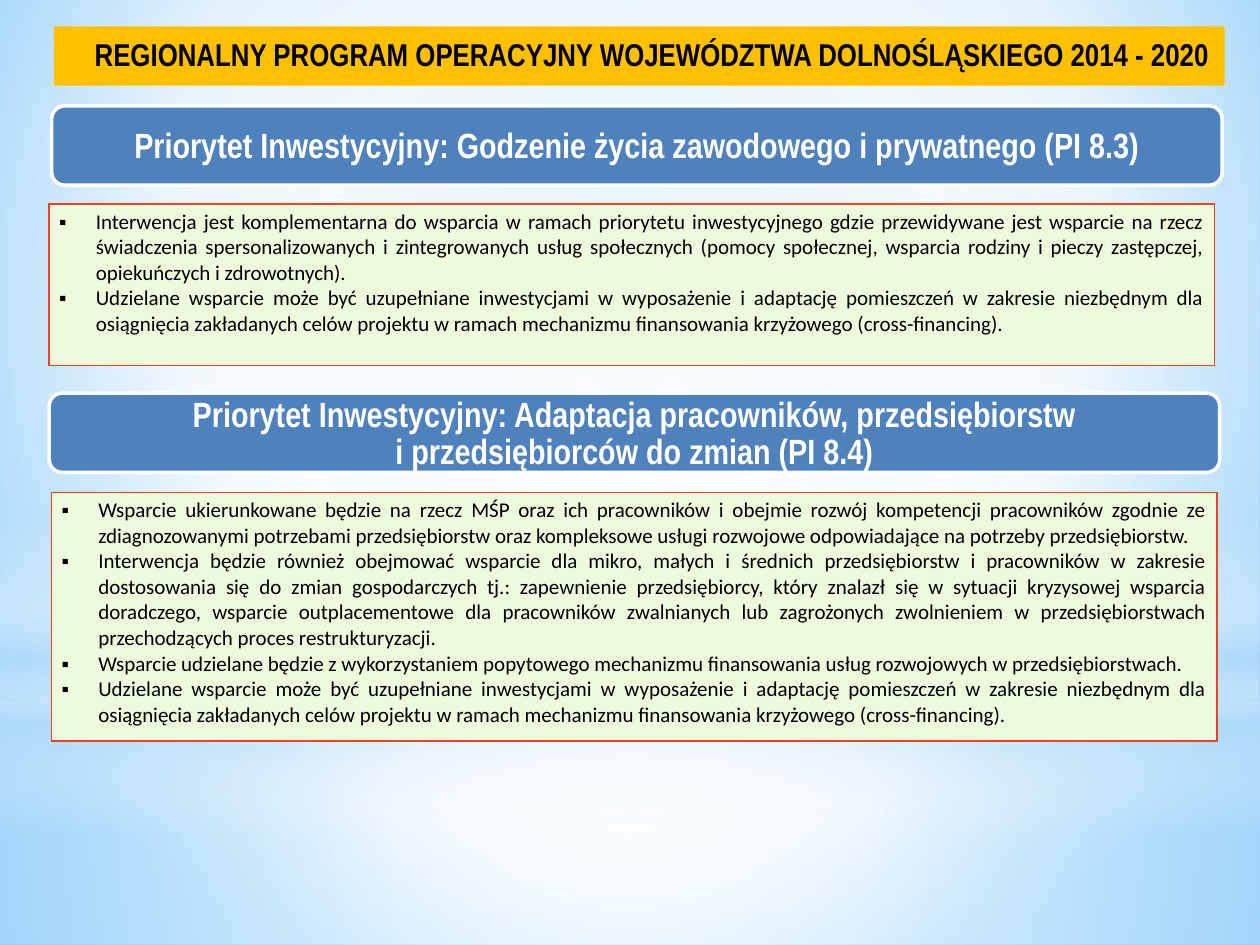
from pptx import Presentation
from pptx.dml.color import RGBColor
from pptx.enum.shapes import MSO_SHAPE
from pptx.enum.text import MSO_ANCHOR, MSO_AUTO_SIZE, PP_ALIGN
from pptx.oxml import parse_xml
from pptx.oxml.ns import nsdecls, qn
from pptx.util import Inches, Pt

HUES = {
    "gold": "FFC000", "blue": "4F81BD", "white": "FFFFFF", "black": "000000",
    "mint": "EDFBDC", "red": "F14124", "haze": "B4DCFA", "sky": "9ED5FF", "deep": "5BB9FF",
}
HEAD = "REGIONALNY PROGRAM OPERACYJNY WOJEWÓDZTWA DOLNOŚLĄSKIEGO 2014 - 2020"
CROSS = (
    "Udzielane wsparcie może być uzupełniane inwestycjami w wyposażenie i adaptację "
    "pomieszczeń w zakresie niezbędnym dla osiągnięcia zakładanych celów projektu w ramach "
    "mechanizmu finansowania krzyżowego (cross-financing)."
)
WORK = [
    "Interwencja jest komplementarna do wsparcia w ramach priorytetu inwestycyjnego gdzie "
    "przewidywane jest wsparcie na rzecz świadczenia spersonalizowanych i zintegrowanych usług "
    "społecznych (pomocy społecznej, wsparcia rodziny i pieczy zastępczej, opiekuńczych i "
    "zdrowotnych).",
    CROSS,
]
FIRMS = [
    "Wsparcie ukierunkowane będzie na rzecz MŚP oraz ich pracowników i obejmie rozwój "
    "kompetencji pracowników zgodnie ze zdiagnozowanymi potrzebami przedsiębiorstw oraz "
    "kompleksowe usługi rozwojowe odpowiadające na potrzeby przedsiębiorstw.",
    "Interwencja będzie również obejmować wsparcie dla mikro, małych i średnich przedsiębiorstw "
    "i pracowników w zakresie dostosowania się do zmian gospodarczych tj.: zapewnienie "
    "przedsiębiorcy, który znalazł się w sytuacji kryzysowej wsparcia doradczego, wsparcie "
    "outplacementowe dla pracowników zwalnianych lub zagrożonych zwolnieniem w "
    "przedsiębiorstwach przechodzących proces restrukturyzacji.",
    "Wsparcie udzielane będzie z wykorzystaniem popytowego mechanizmu finansowania usług "
    "rozwojowych w przedsiębiorstwach.",
    CROSS,
]


def color(name):
    """Return the named colour."""
    return RGBColor.from_string(HUES[name])


def shade(host, stops, focus=None):
    """Swap the solid fill of host for a radial or downward gradient."""
    marks = "".join(
        f'<a:gs pos="{pos * 1000}"><a:srgbClr val="{HUES[hue]}">'
        f'<a:alpha val="{alpha * 1000}"/></a:srgbClr></a:gs>'
        for pos, hue, alpha in stops
    )
    way = '<a:lin ang="5400000" scaled="0"/>'
    if focus:
        sides = " ".join(f'{side}="{part * 1000}"' for side, part in zip("ltrb", focus))
        way = f'<a:path path="circle"><a:fillToRect {sides}/></a:path>'
    fill = parse_xml(
        f'<a:gradFill {nsdecls("a")} rotWithShape="1"><a:gsLst>{marks}</a:gsLst>{way}</a:gradFill>'
    )
    host.replace(host.find(qn("a:solidFill")), fill)


def write(frame, lines, font="Arial Narrow", size=18, hue="black", bold=True,
          align=PP_ALIGN.CENTER, space=None, left=0, hang=0, mark=None):
    """Fill a text frame with formatted paragraphs."""
    frame.word_wrap = True
    for i, line in enumerate(lines):
        para = frame.add_paragraph() if i else frame.paragraphs[0]
        para.text = line
        props = para._p.get_or_add_pPr()
        props.set("marL", str(Inches(left)))
        props.set("indent", str(Inches(hang)))
        if mark:
            props.append(parse_xml(f'<a:buFont {nsdecls("a")} typeface="Arial"/>'))
            props.append(parse_xml(f'<a:buChar {nsdecls("a")} char="{mark}"/>'))
        para.alignment = align
        if space:
            para.line_spacing = space
        for run in para.runs:
            run.font.name, run.font.size, run.font.bold = font, Pt(size), bold
            run.font.color.rgb = color(hue)


class Deck:
    """Hold the grid, the style and the current slide."""

    def __init__(self, wide=10, high=7.5, cols=100, rows=75):
        """Open a title-only slide with a grid of cols by rows."""
        self.show = Presentation()
        self.show.slide_width, self.show.slide_height = Inches(wide), Inches(high)
        self.col, self.row = Inches(wide) / cols, Inches(high) / rows
        self.slide = self.show.slides.add_slide(self.show.slide_layouts[5])

    def place(self, x, y, w, h):
        """Turn grid units into lengths."""
        return [round(n * unit) for n, unit in zip((x, y, w, h), (self.col, self.row) * 2)]

    def ground(self, stops, focus):
        """Paint the slide background."""
        self.slide.background.fill.solid()
        shade(self.slide.element.find(".//" + qn("p:bgPr")), stops, focus)

    def shape(self, kind, box, hue="white", edge=None, host=None):
        """Add a flat preset shape."""
        item = (host or self.slide).shapes.add_shape(kind, *self.place(*box))
        item.shadow.inherit = False
        item.fill.solid()
        item.fill.fore_color.rgb = color(hue)
        if edge:
            item.line.color.rgb, item.line.width = color(edge), Pt(2)
        else:
            item.line.fill.background()
        return item

    def glow(self, kind, box, stops, focus=None):
        """Add a borderless shape with a soft gradient."""
        shade(self.shape(kind, box).element.spPr, stops, focus)

    def title(self, text, box):
        """Place the title bar above the backdrop."""
        bar = self.slide.shapes.title
        bar.left, bar.top, bar.width, bar.height = self.place(*box)
        bar.fill.solid()
        bar.fill.fore_color.rgb = color("gold")
        frame = bar.text_frame
        frame.auto_size, frame.vertical_anchor = MSO_AUTO_SIZE.NONE, MSO_ANCHOR.TOP
        frame.margin_top = Inches(0.07)
        write(frame, [text], left=0.2)
        self.slide.shapes.element.append(bar.element)

    def banner(self, text, x, y):
        """Add a rounded banner grouped with its label."""
        group = self.slide.shapes.add_group_shape()
        self.shape(MSO_SHAPE.ROUNDED_RECTANGLE, (x, y, 92.9, 6.3), "blue", "white", group)
        label = group.shapes.add_textbox(*self.place(x + 0.2, y + 0.3, 92.5, 6))
        frame = label.text_frame
        frame.vertical_anchor = MSO_ANCHOR.MIDDLE
        frame.margin_left = frame.margin_right = Inches(0.26)
        frame.margin_top = frame.margin_bottom = 0
        write(frame, [text], size=20, hue="white", space=0.9)

    def panel(self, lines, box):
        """Add a one-cell table with bulleted text."""
        table = self.slide.shapes.add_table(1, 1, *self.place(*box)).table
        table.first_row = table.horz_banding = False
        cell = table.cell(0, 0)
        cell.margin_left = cell.margin_right = Inches(0.08)
        cell.margin_top = cell.margin_bottom = Inches(0.04)
        cell.fill.solid()
        cell.fill.fore_color.rgb = color("mint")
        props = cell._tc.get_or_add_tcPr()
        for i, side in enumerate("LRTB"):
            props.insert(i, parse_xml(
                f'<a:ln{side} {nsdecls("a")} w="{Pt(1)}"><a:solidFill>'
                f'<a:srgbClr val="{HUES["red"]}"/></a:solidFill></a:ln{side}>'
            ))
        write(cell.text_frame, lines, font="Calibri", size=12, bold=False,
              align=PP_ALIGN.JUSTIFY, left=0.29, hang=-0.29, mark="▪")


def main():
    """Build and save the slide."""
    deck = Deck()
    mid = (50, 50, 50, 50)
    rect = MSO_SHAPE.RECTANGLE
    deck.ground([(0, "sky", 100), (60, "white", 100), (100, "deep", 100)], (20, 10, 20, 60))
    deck.glow(rect, (0, 55.8, 100, 19.2),
              [(0, "white", 91), (37, "white", 76), (100, "haze", 79)], mid)
    deck.glow(rect, (0, 0, 100, 55.8),
              [(0, "white", 89), (48, "white", 62), (100, "haze", 79)], mid)
    deck.glow(rect, (0, 41.2, 100, 25),
              [(0, "white", 0), (29, "white", 30), (45, "haze", 40),
               (55, "white", 26), (65, "haze", 60), (100, "white", 0)])
    deck.glow(MSO_SHAPE.OVAL, (0, 17.5, 100, 55.8),
              [(0, "white", 100), (56, "white", 0)], mid)
    deck.title(HEAD, (4.3, 2.1, 92.9, 4.7))
    deck.banner("Priorytet Inwestycyjny: Godzenie życia zawodowego i prywatnego (PI 8.3)", 4.1, 8.4)
    deck.panel(WORK, (3.9, 16.2, 92.5, 12.8))
    deck.banner("Priorytet Inwestycyjny: Adaptacja pracowników, przedsiębiorstw\n"
                "i przedsiębiorców do zmian (PI 8.4)", 3.9, 31.2)
    deck.panel(FIRMS, (4.1, 39.1, 92.5, 19.7))
    deck.show.save("out.pptx")


if __name__ == "__main__":
    main()
